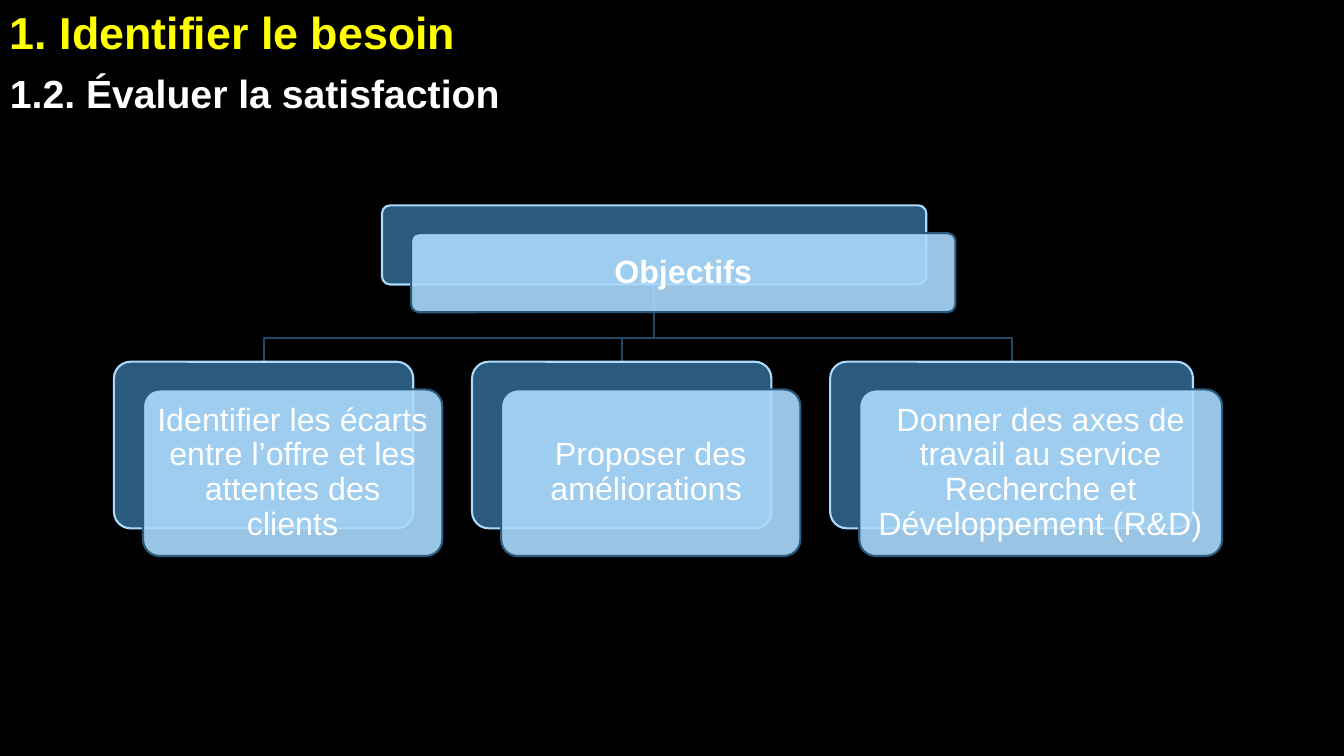
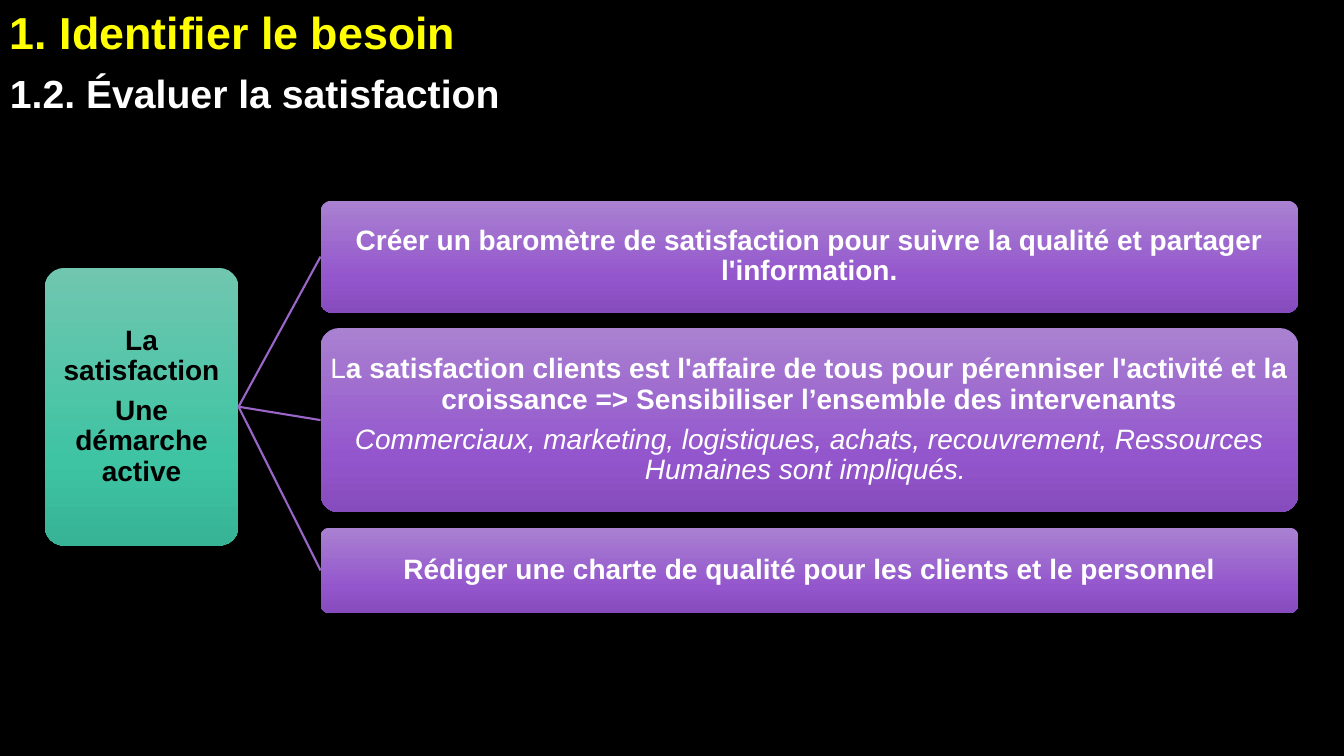
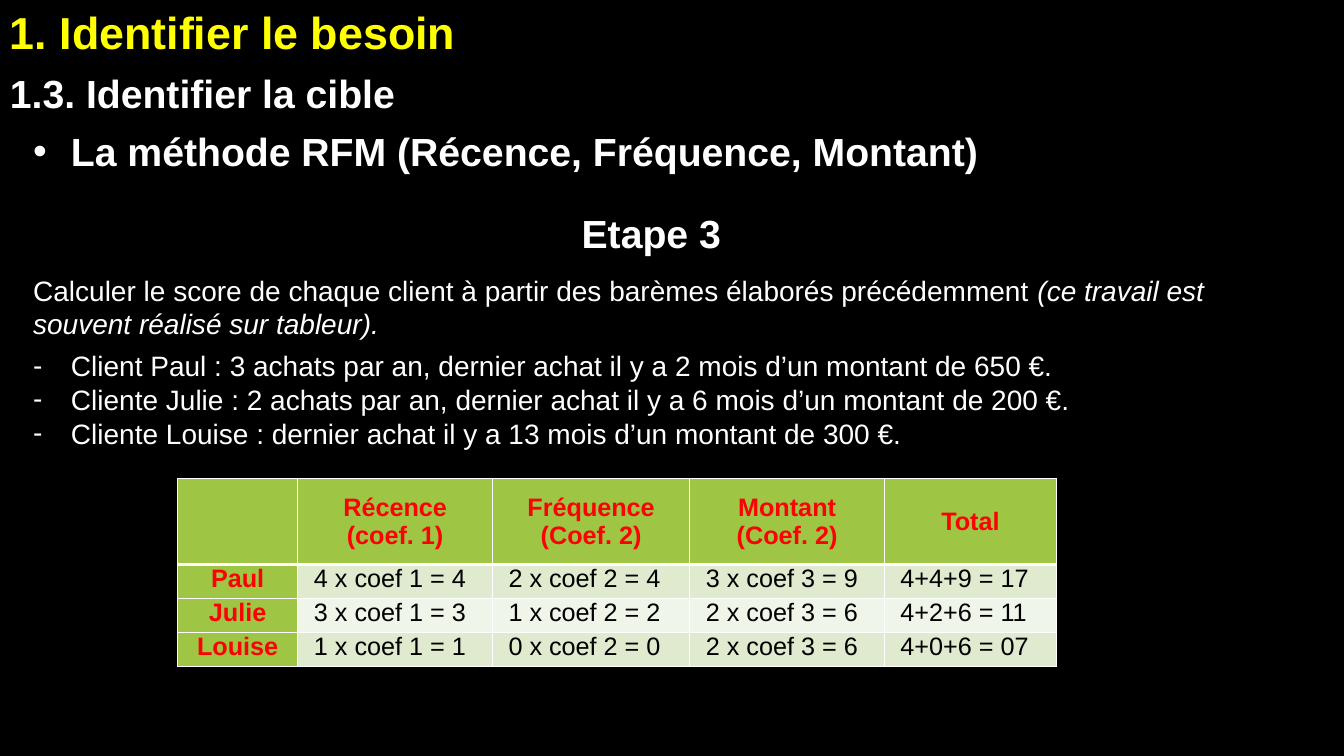
from copy import deepcopy
from dataclasses import dataclass

from lxml import etree
from pptx import Presentation
from pptx.dml.color import RGBColor
from pptx.enum.shapes import MSO_CONNECTOR, MSO_SHAPE
from pptx.enum.text import MSO_ANCHOR, PP_ALIGN
from pptx.oxml.ns import qn
from pptx.util import Pt

ROUNDED = MSO_SHAPE.ROUNDED_RECTANGLE
STRAIGHT = MSO_CONNECTOR.STRAIGHT
TOP, MIDDLE = MSO_ANCHOR.TOP, MSO_ANCHOR.MIDDLE
LEFT, CENTER, JUSTIFY = PP_ALIGN.LEFT, PP_ALIGN.CENTER, PP_ALIGN.JUSTIFY


@dataclass(frozen=True)
class Theme:
    """Colours, font and type sizes shared by the slides."""

    font: str = "Arial"
    black: str = "000000"
    white: str = "FFFFFF"
    yellow: str = "FFFF00"
    red: str = "FF0000"
    dark_blue: str = "2A5B7F"
    light_blue: str = "ABDAFC"
    tree_line: str = "224966"
    branch_line: str = "9A66CA"
    green: str = "9EC544"
    bands: tuple = ("DFEACF", "F0F5E9")
    teal_gradient: tuple = ((0, "70C6AF"), (0.69, "3EC4A3"), (1, "37B395"))
    purple_gradient: tuple = ((0, "A981D1"), (0.69, "9456CD"), (1, "864BBC"))
    title: int = 32
    heading: int = 28
    card: int = 23
    body: int = 20
    cell: int = 18


class Deck:
    """Draws styled elements on the current slide, with lengths in points."""

    def __init__(self, theme):
        """Open an empty widescreen presentation."""
        self.theme = theme
        self.presentation = Presentation()
        self.presentation.slide_width = Pt(960)
        self.presentation.slide_height = Pt(540)
        self.slide = None

    def add_slide(self, subtitle):
        """Start a slide with the chapter title and its subtitle."""
        theme = self.theme
        self.slide = self.presentation.slides.add_slide(self.presentation.slide_layouts[6])
        background = self.slide.background.fill
        background.solid()
        background.fore_color.rgb = RGBColor.from_string(theme.black)
        frame = self.text_box(0, 0, 907, 46)
        self.paragraph(frame, [("1. Identifier le besoin", "b")], theme.title, theme.yellow,
                       before=3, after=3)
        frame = self.text_box(0, 46, 890, 41)
        self.paragraph(frame, [(subtitle, "b")], theme.heading, align=JUSTIFY, before=6)

    def text_box(self, left, top, width, height):
        """Add a wrapping text box and return its frame."""
        box = self.slide.shapes.add_textbox(Pt(left), Pt(top), Pt(width), Pt(height))
        box.text_frame.word_wrap = True
        return box.text_frame

    def paragraph(self, frame, runs, size, color=None, align=LEFT, before=0, after=0,
                  spacing=1.0, bullet=None):
        """Write (text, style) runs as one paragraph, where style holds b or i."""
        first = frame.paragraphs[0]
        paragraph = frame.add_paragraph() if first.runs else first
        paragraph.alignment = align
        paragraph.space_before = Pt(before)
        paragraph.space_after = Pt(after)
        paragraph.line_spacing = spacing
        for text, style in runs:
            run = paragraph.add_run()
            run.text = text
            run.font.name = self.theme.font
            run.font.size = Pt(size)
            run.font.bold = "b" in style
            run.font.italic = "i" in style
            run.font.color.rgb = RGBColor.from_string(color or self.theme.white)
        if bullet:
            properties = paragraph._p.get_or_add_pPr()
            properties.set("marL", str(Pt(27)))
            properties.set("indent", str(-Pt(27)))
            etree.SubElement(properties, qn("a:buFont")).set("typeface", self.theme.font)
            etree.SubElement(properties, qn("a:buChar")).set("char", bullet)

    def rounded_box(self, left, top, width, height):
        """Add a rounded box without shadow or outline."""
        shape = self.slide.shapes.add_shape(ROUNDED, Pt(left), Pt(top), Pt(width), Pt(height))
        shape.adjustments[0] = 0.1
        shape.shadow.inherit = False
        shape.line.fill.background()
        return shape

    def fill_box(self, left, top, width, height, paragraphs, size, inset, color=None):
        """Add a rounded box holding centred paragraphs."""
        shape = self.rounded_box(left, top, width, height)
        frame = shape.text_frame
        frame.word_wrap = True
        frame.vertical_anchor = MIDDLE
        frame.margin_left = frame.margin_right = Pt(inset)
        frame.margin_top = frame.margin_bottom = Pt(inset)
        for runs in paragraphs:
            self.paragraph(frame, runs, size, color, CENTER, after=0.35 * size, spacing=0.9)
        return shape

    def paint(self, shape, fill, outline):
        """Give a shape a plain fill and an outline."""
        shape.fill.solid()
        shape.fill.fore_color.rgb = RGBColor.from_string(fill)
        shape.line.color.rgb = RGBColor.from_string(outline)
        shape.line.width = Pt(1.5)

    def layered_card(self, left, top, width, height, runs):
        """Add a dark box with a translucent text box shifted over it."""
        theme = self.theme
        self.paint(self.rounded_box(left, top, width, height), theme.dark_blue, theme.light_blue)
        front = self.fill_box(left + 20.8, top + 19.8, width, height, [runs], theme.card, 6.5)
        self.paint(front, theme.light_blue, theme.dark_blue)
        color = front._element.spPr.find(qn("a:solidFill"))[0]
        etree.SubElement(color, qn("a:alpha")).set("val", "90000")

    def gradient_box(self, left, top, width, height, paragraphs, stops, color=None):
        """Add a text box with a three-stop vertical gradient."""
        shape = self.fill_box(left, top, width, height, paragraphs, self.theme.body, 0.72, color)
        shape.fill.gradient()
        shape.fill.gradient_angle = 270
        stop_list = shape._element.spPr.find(qn("a:gradFill")).find(qn("a:gsLst"))
        stop_list.append(deepcopy(stop_list[-1]))
        for stop, (position, stop_color) in zip(shape.fill.gradient_stops, stops):
            stop.position = position
            stop.color.rgb = RGBColor.from_string(stop_color)

    def line(self, start, end, color):
        """Draw a straight line between two points."""
        connector = self.slide.shapes.add_connector(STRAIGHT, *map(Pt, start + end))
        connector.line.color.rgb = RGBColor.from_string(color)
        connector.line.width = Pt(1.5)
        etree.SubElement(connector._element.spPr, qn("a:effectLst"))

    def bent_line(self, start, bend_y, end, color):
        """Draw an open line that goes down, across at bend_y, then down."""
        points = [start, (start[0], bend_y), (end[0], bend_y), end]
        corners = [(Pt(x), Pt(y)) for x, y in points]
        builder = self.slide.shapes.build_freeform(*corners[0])
        builder.add_line_segments(corners[1:], close=False)
        shape = builder.convert_to_shape()
        shape.shadow.inherit = False
        shape.fill.background()
        shape.line.color.rgb = RGBColor.from_string(color)
        shape.line.width = Pt(1.5)

    def borders(self, cell, top, bottom):
        """Draw white cell borders, with the top and bottom widths given."""
        properties = cell._tc.get_or_add_tcPr()
        for side, width in (("L", 1), ("R", 1), ("T", top), ("B", bottom)):
            border = etree.SubElement(properties, qn(f"a:ln{side}"), w=str(Pt(width)))
            fill = etree.SubElement(border, qn("a:solidFill"))
            etree.SubElement(fill, qn("a:srgbClr"), val=self.theme.white)

    def table(self, left, top, widths, heights, rows):
        """Add a table with a green header row and first column."""
        theme = self.theme
        table = self.slide.shapes.add_table(
            len(rows), len(widths), Pt(left), Pt(top), Pt(sum(widths)), Pt(sum(heights))).table
        table.first_row = table.horz_banding = False
        for column, width in zip(table.columns, widths):
            column.width = Pt(width)
        for i, (row, height) in enumerate(zip(rows, heights)):
            table.rows[i].height = Pt(height)
            for j, text in enumerate(row):
                cell = table.cell(i, j)
                label = i == 0 or j == 0
                self.borders(cell, 3 if i == 1 else 1, 3 if i == 0 else 1)
                cell.fill.solid()
                fill = theme.green if label else theme.bands[(i - 1) % 2]
                cell.fill.fore_color.rgb = RGBColor.from_string(fill)
                cell.margin_left = cell.margin_right = Pt(11.5)
                cell.margin_top = cell.margin_bottom = Pt(0)
                cell.vertical_anchor = MIDDLE if i == 0 else TOP
                if text:
                    self.paragraph(cell.text_frame, [(text, "b" if label else "")], theme.cell,
                                   theme.red if label else theme.black,
                                   CENTER if label else JUSTIFY, before=6)


def objectives_slide(deck):
    """Build the tree of objectives."""
    deck.add_slide("1.2. Évaluer la satisfaction ")
    root_left, root_top, root_width, root_height = 272.9, 146.7, 388.8, 56.5
    leaf_top, leaf_height, gap = 258.4, 119, 42
    leaves = [
        (213.8, "Identifier les écarts entre l’offre et les attentes des clients"),
        (213.8, "Proposer des améliorations "),
        (259.2, "Donner des axes de travail au service Recherche et Développement (R&D)"),
    ]
    lefts = [81.4 + sum(width + gap for width, _ in leaves[:i]) for i in range(len(leaves))]
    root_bottom = (root_left + root_width / 2, root_top + root_height)
    for left, (width, _) in zip(lefts, leaves):
        deck.bent_line(root_bottom, 241.4, (left + width / 2, leaf_top), deck.theme.tree_line)
    deck.layered_card(root_left, root_top, root_width, root_height, [("Objectifs", "b")])
    for left, (width, text) in zip(lefts, leaves):
        deck.layered_card(left, leaf_top, width, leaf_height, [(text, "")])


def approach_slide(deck):
    """Build the active approach and its three branches."""
    deck.add_slide("1.2. Évaluer la satisfaction ")
    theme = deck.theme
    root_left, root_top, root_width, root_height = 32, 191.4, 138.4, 198.3
    branch_left, branch_top, gap = 229, 143.3, 11
    branches = [
        (80, [[("Créer un baromètre de satisfaction pour suivre la qualité et partager "
                "l'information.", "b")]]),
        (131.6, [[("L", ""),
                  ("a satisfaction clients est l'affaire de tous pour pérenniser l'activité et "
                   "la croissance => Sensibiliser l’ensemble des intervenants", "b")],
                 [("Commerciaux, marketing, logistiques, achats, recouvrement, Ressources "
                   "Humaines sont impliqués. ", "i")]]),
        (61, [[("Rédiger une charte de qualité pour les clients et le personnel", "b")]]),
    ]
    deck.gradient_box(root_left, root_top, root_width, root_height,
                      [[("La satisfaction", "b")], [("Une démarche active", "b")]],
                      theme.teal_gradient, theme.black)
    origin = (root_left + root_width, root_top + root_height / 2)
    for height, paragraphs in branches:
        deck.line(origin, (branch_left, branch_top + height / 2), theme.branch_line)
        deck.gradient_box(branch_left, branch_top, 698.4, height, paragraphs,
                          theme.purple_gradient)
        branch_top += height + gap


def scoring_slide(deck):
    """Build the scoring step and its table."""
    deck.add_slide("1.3. Identifier la cible")
    theme = deck.theme
    frame = deck.text_box(16.6, 87.3, 905, 243)
    deck.paragraph(frame, [("La méthode RFM (Récence, Fréquence, Montant)", "b")],
                   theme.heading, align=JUSTIFY, before=12, bullet="•")
    deck.paragraph(frame, [("Etape 3 ", "b")], theme.heading, align=CENTER, before=25, after=6)
    deck.paragraph(frame, [
        ("Calculer le score de chaque client à partir des barèmes élaborés précédemment ", ""),
        ("(ce travail est souvent réalisé sur tableur).", "i"),
    ], theme.body, before=6, after=6)
    for client in (
        "Client Paul : 3 achats par an, dernier achat il y a 2 mois d’un montant de 650 €. ",
        "Cliente Julie : 2 achats par an, dernier achat il y a 6 mois d’un montant de 200 €. ",
        "Cliente Louise : dernier achat il y a 13 mois d’un montant de 300 €. ",
    ):
        deck.paragraph(frame, [(client, "")], theme.body, align=JUSTIFY, bullet="-")
    deck.table(126.8, 342, [86, 139, 141, 139, 123], [61.2, 24.3, 24.3, 24.3], [
        ["", "Récence (coef. 1)", "Fréquence (Coef. 2)", "Montant (Coef. 2)", "Total"],
        ["Paul", "4 x coef 1 = 4", "2 x coef 2 = 4", "3 x coef 3 = 9", "4+4+9 = 17"],
        ["Julie", "3 x coef 1 = 3", "1 x coef 2 = 2", "2 x coef 3 = 6", "4+2+6 = 11"],
        ["Louise", "1 x coef 1 = 1", "0 x coef 2 = 0", "2 x coef 3 = 6", "4+0+6 = 07"],
    ])


def main():
    """Build the three slides and save them."""
    deck = Deck(Theme())
    objectives_slide(deck)
    approach_slide(deck)
    scoring_slide(deck)
    deck.presentation.save("out.pptx")


if __name__ == "__main__":
    main()
